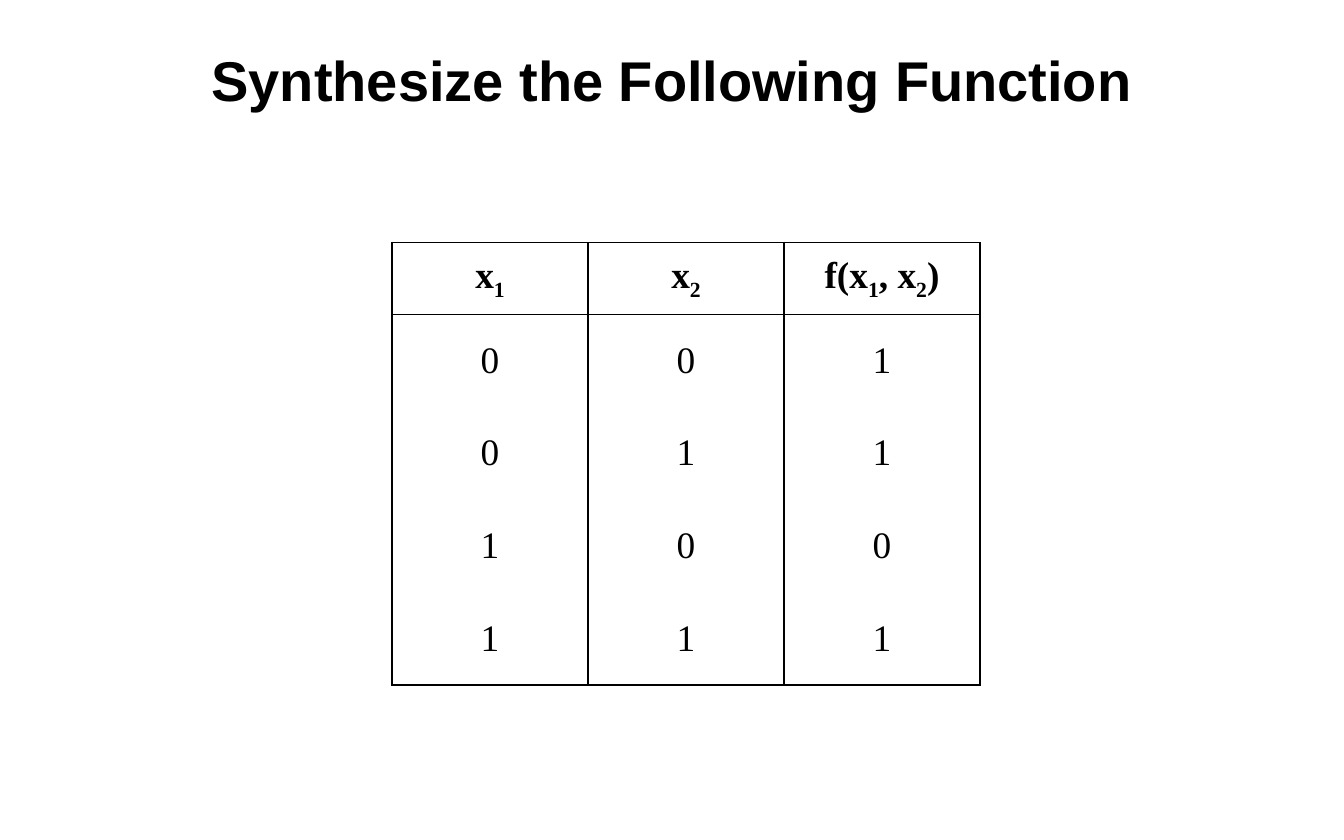
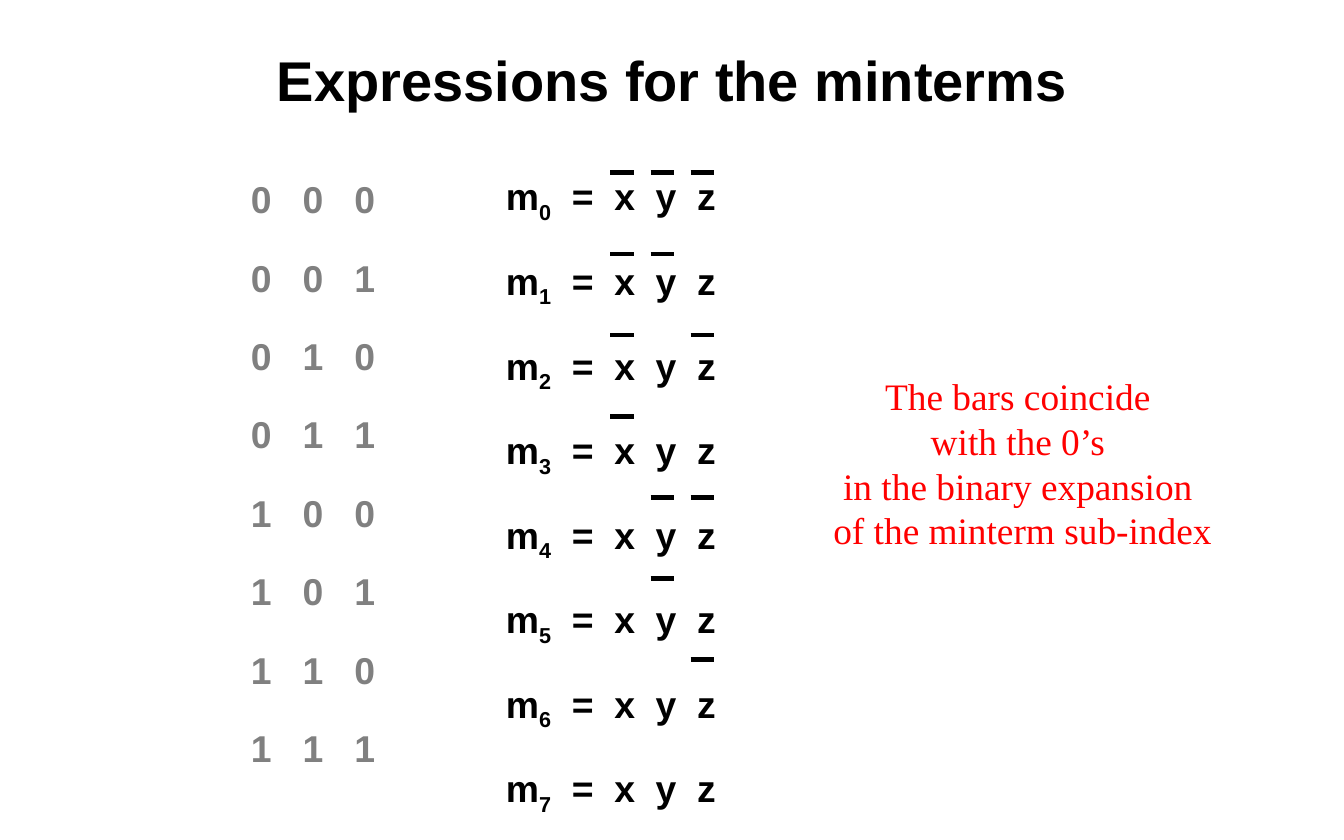
from dataclasses import dataclass
from typing import NamedTuple

from lxml.etree import SubElement
from pptx import Presentation
from pptx.dml.color import RGBColor
from pptx.enum.shapes import MSO_CONNECTOR
from pptx.enum.text import MSO_ANCHOR, MSO_AUTO_SIZE, PP_ALIGN
from pptx.oxml.ns import qn
from pptx.util import Emu, Inches, Pt


class TextStyle(NamedTuple):
    font: str
    size: int
    color: str
    bold: bool = False


class Piece(NamedTuple):
    text: str
    subscript: bool = False


class Box(NamedTuple):
    """A place on the grid, in columns and rows."""
    left: float
    top: float
    width: float
    height: float


@dataclass(frozen=True)
class Theme:
    title: TextStyle = TextStyle("Arial", 36, "000000", True)
    minterm: TextStyle = TextStyle("Arial", 24, "000000", True)
    code: TextStyle = TextStyle("Arial", 24, "808080", True)
    header: TextStyle = TextStyle("Times New Roman", 24, "000000", True)
    cell: TextStyle = TextStyle("Times New Roman", 24, "000000")
    note: TextStyle = TextStyle("Times New Roman", 24, "FF0000")
    line: str = "000000"
    border_width: float = 1
    bar_width: float = 3
    first_space: float = 2
    list_space: float = 21.6


THEME = Theme()

# Grid: 144 columns by 90 rows
SLIDE_WIDTH, SLIDE_HEIGHT = Inches(12), Inches(7.5)
COLUMN, ROW = SLIDE_WIDTH / 144, SLIDE_HEIGHT / 90

TITLE_BOX = Box(0, 4, 144, 9)
TABLE_BOX = Box(42, 26, 63, 47.4)
HEADER_ROWS = 7.7
MINTERM_BOX = Box(53, 18, 38, 70)
CODE_BOX = Box(25.7, 18.3, 24.5, 70)
NOTE_BOX = Box(87.9, 39.4, 43.3, 20.6)
FIRST_BAR = Box(65.4, 18.5, 2.48, 0)
BAR_COLUMN_STEP, BAR_ROW_STEP = 4.3, 8.7

NO_GRID_STYLE = "{2D5ABB26-0587-4C30-8999-92F81FD0307C}"
CODES = [f"{index:03b}" for index in range(8)]
TRUTH_HEADER = (
    (Piece("x"), Piece("1", True)),
    (Piece("x"), Piece("2", True)),
    (Piece("f(x"), Piece("1", True), Piece(", x"), Piece("2", True), Piece(")")),
)
TRUTH_ROWS = ("001", "011", "100", "111")
NOTE_LINES = (
    "The bars coincide ",
    "with the 0’s ",
    "in the binary expansion ",
    "of the minterm sub-index",
)


def columns(count: float) -> Emu:
    return Emu(round(count * COLUMN))


def rows(count: float) -> Emu:
    return Emu(round(count * ROW))


def place(box: Box) -> tuple:
    return columns(box.left), rows(box.top), columns(box.width), rows(box.height)


def add_runs(paragraph, pieces, style: TextStyle) -> None:
    for piece in pieces:
        run = paragraph.add_run()
        run.text = piece.text
        run.font.name = style.font
        run.font.size = Pt(style.size)
        run.font.bold = style.bold
        run.font.color.rgb = RGBColor.from_string(style.color)
        if piece.subscript:
            run._r.get_or_add_rPr().set("baseline", "-25000")


def next_paragraph(frame, index: int):
    return frame.add_paragraph() if index else frame.paragraphs[0]


def add_titled_slide(presentation, layout_index: int, title: str):
    slide = presentation.slides.add_slide(presentation.slide_layouts[layout_index])
    shape = slide.shapes.title
    shape.left, shape.top, shape.width, shape.height = place(TITLE_BOX)
    frame = shape.text_frame
    frame.auto_size = MSO_AUTO_SIZE.NONE
    frame.vertical_anchor = MSO_ANCHOR.MIDDLE
    frame.paragraphs[0].alignment = PP_ALIGN.CENTER
    add_runs(frame.paragraphs[0], [Piece(title)], THEME.title)
    return slide


def fill_list(frame, lines, style: TextStyle) -> None:
    """Write evenly spaced lines without bullets."""
    frame.auto_size = MSO_AUTO_SIZE.NONE
    frame.word_wrap = True
    for index, pieces in enumerate(lines):
        paragraph = next_paragraph(frame, index)
        paragraph.space_before = Pt(THEME.list_space if index else THEME.first_space)
        properties = paragraph._p.get_or_add_pPr()
        properties.set("marL", "0")
        properties.set("indent", "0")
        SubElement(properties, qn("a:buNone"))
        add_runs(paragraph, pieces, style)


def set_borders(cell, sides: str) -> None:
    """Draw the named sides and clear the others."""
    properties = cell._tc.get_or_add_tcPr()
    for side in "LRTB":
        line = SubElement(properties, qn(f"a:ln{side}"), w=str(Pt(THEME.border_width)))
        if side in sides:
            fill = SubElement(line, qn("a:solidFill"))
            SubElement(fill, qn("a:srgbClr"), val=THEME.line)
        else:
            SubElement(line, qn("a:noFill"))


def fill_cell(cell, pieces, style: TextStyle, space: float, sides: str) -> None:
    cell.vertical_anchor = MSO_ANCHOR.MIDDLE
    set_borders(cell, sides)
    cell.fill.background()
    paragraph = cell.text_frame.paragraphs[0]
    paragraph.alignment = PP_ALIGN.CENTER
    paragraph.space_before = Pt(space)
    add_runs(paragraph, pieces, style)


def add_truth_table(slide) -> None:
    row_count, column_count = len(TRUTH_ROWS) + 1, len(TRUTH_HEADER)
    frame = slide.shapes.add_table(row_count, column_count, *place(TABLE_BOX))
    table = frame.table
    table.first_row = table.horz_banding = False
    table._tbl.tblPr.find(qn("a:tableStyleId")).text = NO_GRID_STYLE
    body_rows = (TABLE_BOX.height - HEADER_ROWS) / len(TRUTH_ROWS)
    for index, row in enumerate(table.rows):
        row.height = rows(body_rows if index else HEADER_ROWS)
    for column, pieces in enumerate(TRUTH_HEADER):
        fill_cell(table.cell(0, column), pieces, THEME.header, 6, "LRTB")
    for row, digits in enumerate(TRUTH_ROWS, start=1):
        sides = {1: "LRT", len(TRUTH_ROWS): "LRB"}.get(row, "LR")
        for column, digit in enumerate(digits):
            fill_cell(table.cell(row, column), [Piece(digit)], THEME.cell, 12, sides)


def add_bar(slide, row: int, column: int) -> None:
    left = FIRST_BAR.left + column * BAR_COLUMN_STEP
    height = rows(FIRST_BAR.top + row * BAR_ROW_STEP)
    bar = slide.shapes.add_connector(
        MSO_CONNECTOR.STRAIGHT,
        columns(left), height, columns(left + FIRST_BAR.width), height,
    )
    bar.line.color.rgb = RGBColor.from_string(THEME.line)
    bar.line.width = Pt(THEME.bar_width)
    SubElement(bar._element.spPr, qn("a:effectLst"))


def add_minterms(slide) -> None:
    body = slide.placeholders[1]
    body.left, body.top, body.width, body.height = place(MINTERM_BOX)
    lines = [
        (Piece("m"), Piece(str(index), True), Piece("  =  x  y  z"))
        for index in range(len(CODES))
    ]
    fill_list(body.text_frame, lines, THEME.minterm)

    # A bar marks each variable whose digit is 0
    for row, code in enumerate(CODES):
        for column, digit in enumerate(code):
            if digit == "0":
                add_bar(slide, row, column)


def add_codes(slide) -> None:
    box = slide.shapes.add_textbox(*place(CODE_BOX))
    lines = [[Piece("   ".join(code))] for code in CODES]
    fill_list(box.text_frame, lines, THEME.code)


def add_note(slide) -> None:
    frame = slide.shapes.add_textbox(*place(NOTE_BOX)).text_frame
    frame.word_wrap = False
    frame.auto_size = MSO_AUTO_SIZE.SHAPE_TO_FIT_TEXT
    for index, line in enumerate(NOTE_LINES):
        paragraph = next_paragraph(frame, index)
        paragraph.alignment = PP_ALIGN.CENTER
        add_runs(paragraph, [Piece(line)], THEME.note)


def main() -> None:
    presentation = Presentation()
    presentation.slide_width, presentation.slide_height = SLIDE_WIDTH, SLIDE_HEIGHT

    # Truth table
    slide = add_titled_slide(presentation, 5, "Synthesize the Following Function")
    add_truth_table(slide)

    # Minterms
    slide = add_titled_slide(presentation, 1, "Expressions for the minterms")
    add_minterms(slide)
    add_codes(slide)
    add_note(slide)

    presentation.save("out.pptx")


if __name__ == "__main__":
    main()
